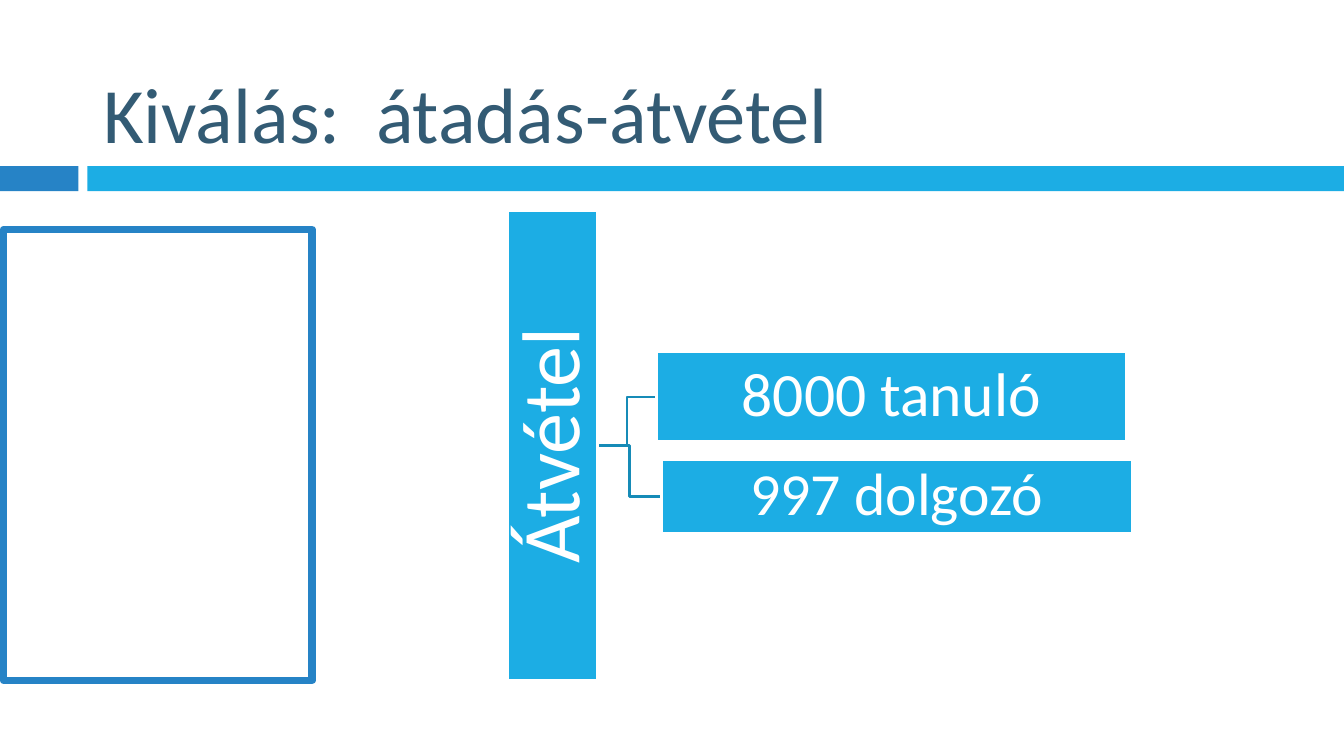
from pptx import Presentation
from pptx.dml.color import RGBColor
from pptx.enum.shapes import MSO_CONNECTOR, MSO_SHAPE
from pptx.enum.text import MSO_ANCHOR, MSO_AUTO_SIZE, PP_ALIGN
from pptx.oxml.ns import qn
from pptx.util import Pt

BLUE = RGBColor(0x26, 0x83, 0xC6)
CYAN = RGBColor(0x1C, 0xAD, 0xE4)
BRANCH_BLUE = RGBColor(0x16, 0x8B, 0xB7)
TITLE_BLUE = RGBColor(0x33, 0x5B, 0x74)
WHITE = RGBColor(0xFF, 0xFF, 0xFF)


def apply(target, formats):
    for name, value in formats.items():
        setattr(target, name, value)


def add_box(slide, box, fill, line=None, width=0):
    rectangle = slide.shapes.add_shape(MSO_SHAPE.RECTANGLE, *map(Pt, box))
    rectangle.shadow.inherit = False
    rectangle.fill.solid()
    rectangle.fill.fore_color.rgb = fill
    if line is None:
        rectangle.line.fill.background()
    else:
        rectangle.line.color.rgb = line
        rectangle.line.width = Pt(width)
    return rectangle


def write(frame, text, size, color, frame_formats, paragraph_formats):
    apply(frame, {"word_wrap": True, "auto_size": MSO_AUTO_SIZE.NONE, **frame_formats})
    paragraph = frame.paragraphs[0]
    apply(paragraph, paragraph_formats)
    run = paragraph.add_run()
    run.text = text
    apply(run.font, {"name": "Calibri", "size": Pt(size)})
    run.font.color.rgb = color


def add_title(slide, box, text):
    title = slide.shapes.title
    apply(title, dict(zip(("left", "top", "width", "height"), map(Pt, box))))
    write(title.text_frame, text, 42, TITLE_BLUE,
          {"vertical_anchor": MSO_ANCHOR.BOTTOM}, {"alignment": PP_ALIGN.LEFT})


def add_band(slide, box):
    left, top, width, height = box
    short, gap = 42, 4.8
    add_box(slide, (left, top, short, height), BLUE)
    add_box(slide, (left + short + gap, top, width - short - gap, height), CYAN)


def add_node(slide, box, text, size, inset):
    node = add_box(slide, box, CYAN, WHITE, 1.5)
    margins = {f"margin_{side}": Pt(inset) for side in ("left", "top", "right", "bottom")}
    write(node.text_frame, text, size, WHITE,
          {"vertical_anchor": MSO_ANCHOR.MIDDLE, **margins},
          {"alignment": PP_ALIGN.CENTER, "line_spacing": 0.9})
    return node


def add_branch(slide, start, end):
    branch = slide.shapes.add_connector(MSO_CONNECTOR.ELBOW, *map(Pt, start + end))
    branch.line.color.rgb = BRANCH_BLUE
    branch.line.width = Pt(1.5)
    properties = branch._element.spPr
    properties.append(properties.makeelement(qn("a:effectLst"), {}))


def add_hierarchy(slide, box, root, children):
    left, top, width, height = box
    root_width, child_width = 48.2, 252
    middle = top + height / 2

    # Branches lie behind the nodes
    for _, _, x, y, child_height in children:
        add_branch(slide, (left + root_width, middle),
                   (left + x, top + y + child_height / 2))

    # Root reads upwards: a wide box turned about its centre
    root_box = (left + (root_width - height) / 2, middle - root_width / 2,
                height, root_width)
    add_node(slide, root_box, root, 44, 2.2).rotation = 270

    for text, size, x, y, child_height in children:
        add_node(slide, (left + x, top + y, child_width, child_height), text, size, 1.5)


def main():
    presentation = Presentation()
    presentation.slide_width, presentation.slide_height = Pt(720), Pt(405)
    slide = presentation.slides.add_slide(presentation.slide_layouts[5])

    # Heading and the band under it
    add_band(slide, (0, 89, 720, 13.5))
    add_title(slide, (48, 6, 636, 82.8), "Kiválás:  átadás-átvétel")

    # Empty frame on the left
    add_box(slide, (1.8, 123, 165.5, 241.5), WHITE, BLUE, 4)

    # Takeover: text, size, offset x, offset y, height
    add_hierarchy(slide, (272, 112.6, 334.5, 252), "Átvétel", [
        ("8000 tanuló", 33, 79.6, 76, 48.2),
        ("997 dolgozó", 32, 82.5, 133.6, 39.6),
    ])
    presentation.save("out.pptx")


if __name__ == "__main__":
    main()
